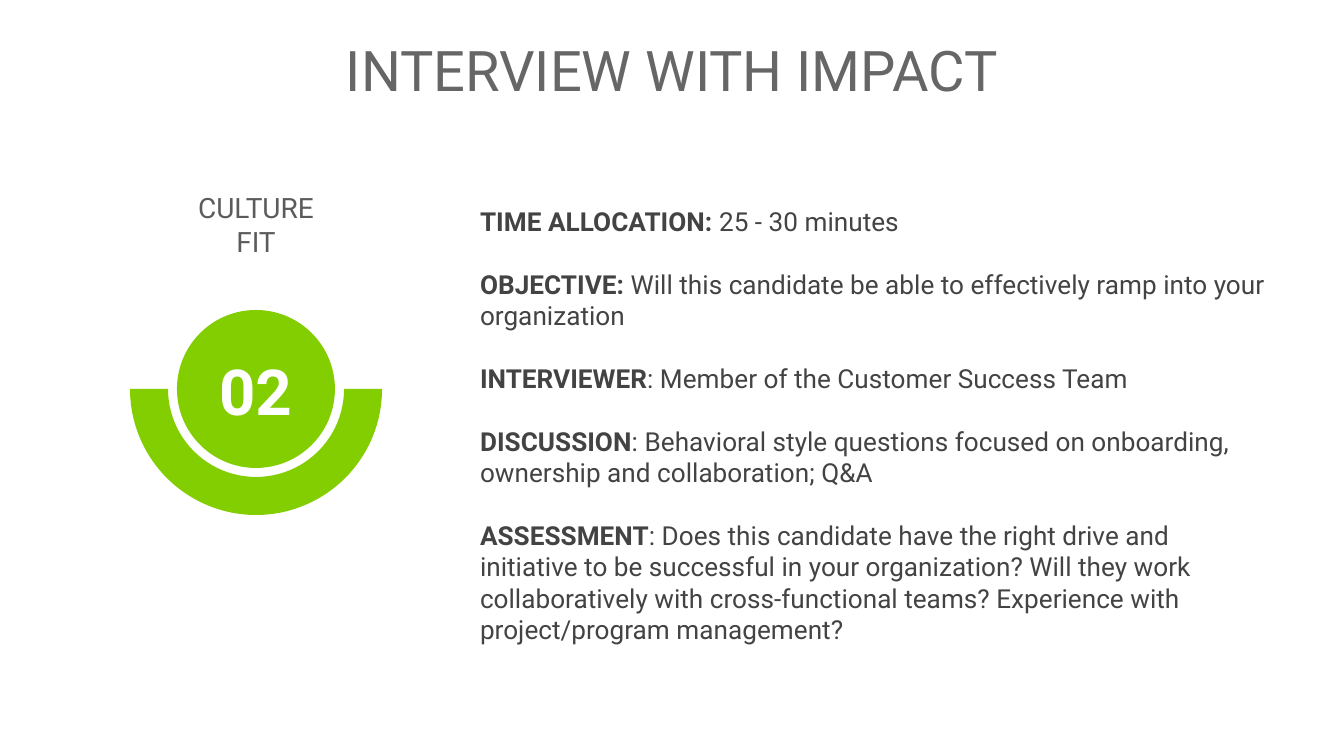
from pptx import Presentation
from pptx.dml.color import RGBColor
from pptx.enum.shapes import MSO_SHAPE
from pptx.enum.text import MSO_ANCHOR, PP_ALIGN
from pptx.util import Pt

PX = 914400 / 134.4  # EMU per px
FONT = "Roboto"
GREEN = RGBColor(0x83, 0xCE, 0x00)
WHITE = RGBColor(0xFF, 0xFF, 0xFF)
TITLE_GRAY = RGBColor(0x66, 0x66, 0x66)
LABEL_GRAY = RGBColor(0x5B, 0x5B, 0x5B)
BODY_GRAY = RGBColor(0x43, 0x43, 0x43)

OVAL, BLOCK_ARC = MSO_SHAPE.OVAL, MSO_SHAPE.BLOCK_ARC
TOP, MIDDLE, BOTTOM = MSO_ANCHOR.TOP, MSO_ANCHOR.MIDDLE, MSO_ANCHOR.BOTTOM
LEFT, CENTER = PP_ALIGN.LEFT, PP_ALIGN.CENTER

DETAILS = [
    ("TIME ALLOCATION:", " 25 - 30 minutes"),
    ("OBJECTIVE:", " Will this candidate be able to effectively ramp into your organization"),
    ("INTERVIEWER", ": Member of the Customer Success Team"),
    ("DISCUSSION", ": Behavioral style questions focused on onboarding, "
                   "ownership and collaboration; Q&A"),
    ("ASSESSMENT", ": Does this candidate have the right drive and initiative to be "
                   "successful in your organization? Will they work collaboratively with "
                   "cross-functional teams? Experience with project/program management?"),
]


def emu(px):
    return round(px * PX)


class SlideBuilder:
    def __init__(self, slide, font):
        self.slide = slide
        self.font = font

    def round_shape(self, kind, cx, cy, radius, color):
        box = (cx - radius, cy - radius, 2 * radius, 2 * radius)
        sp = self.slide.shapes.add_shape(kind, *map(emu, box))
        sp.shadow.inherit = False
        sp.fill.solid()
        sp.fill.fore_color.rgb = color
        sp.line.fill.background()
        return sp

    def circle(self, cx, cy, radius, color):
        self.round_shape(OVAL, cx, cy, radius, color)

    def lower_half_ring(self, cx, cy, outer, inner, color):
        sp = self.round_shape(BLOCK_ARC, cx, cy, outer, color)
        sp.adjustments[0] = 0
        sp.adjustments[1] = 108  # 180 degrees
        sp.adjustments[2] = (outer - inner) / (2 * outer)

    def text(self, box, paragraphs, size, color, align=CENTER, anchor=TOP,
             inset=(13, 13), gap=0):
        """Each paragraph is a list of (text, bold) runs."""
        tf = self.slide.shapes.add_textbox(*map(emu, box)).text_frame
        tf.word_wrap = True
        tf.vertical_anchor = anchor
        tf.margin_left = tf.margin_right = emu(inset[0])
        tf.margin_top = tf.margin_bottom = emu(inset[1])
        for i, runs in enumerate(paragraphs):
            p = tf.add_paragraph() if i else tf.paragraphs[0]
            p.alignment = align
            p.space_before = Pt(gap if i else 0)
            p.font.name = self.font
            p.font.size = Pt(size)
            p.font.color.rgb = color
            for content, bold in runs:
                r = p.add_run()
                r.text = content
                r.font.bold = bold


def main():
    prs = Presentation()
    prs.slide_width, prs.slide_height = emu(1344), emu(756)
    s = SlideBuilder(prs.slides.add_slide(prs.slide_layouts[6]), FONT)

    # Numbered badge
    cx, cy = 256, 389
    s.circle(cx, cy, 79, GREEN)
    s.lower_half_ring(cx, cy, 126, 88, GREEN)
    s.text((172, 188, 168, 73), [[("CULTURE FIT", False)]], 15, LABEL_GRAY,
           anchor=BOTTOM, inset=(5, 3))
    s.text((212, 349, 87, 82), [[("02", True)]], 34, WHITE,
           anchor=MIDDLE, inset=(5, 3))

    # Title
    s.text((0, 22, 1344, 95), [[("INTERVIEW WITH IMPACT", False)]], 30, TITLE_GRAY)

    # Interview details
    s.text((467, 192, 816, 503),
           [[(label, True), (detail, False)] for label, detail in DETAILS],
           14, BODY_GRAY, align=LEFT, gap=16.9)

    prs.save("out.pptx")


if __name__ == "__main__":
    main()
